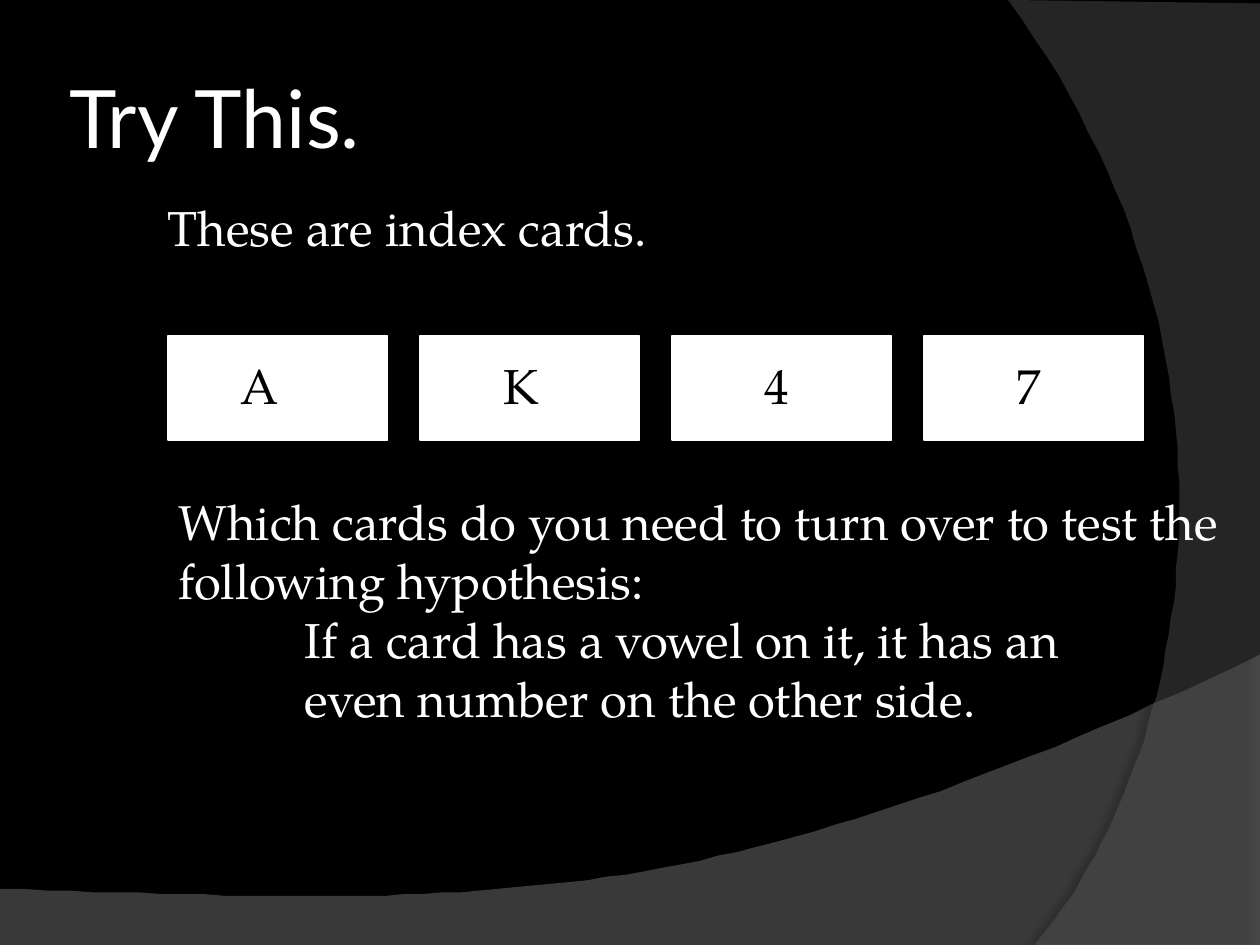
from lxml import etree
from pptx import Presentation
from pptx.dml.color import RGBColor
from pptx.enum.shapes import MSO_SHAPE
from pptx.enum.text import MSO_ANCHOR, MSO_AUTO_SIZE, PP_ALIGN
from pptx.oxml.ns import qn
from pptx.util import Pt

RECTANGLE = MSO_SHAPE.RECTANGLE
MIDDLE = MSO_ANCHOR.MIDDLE
LEFT = PP_ALIGN.LEFT
FIT_SHAPE, NO_FIT = MSO_AUTO_SIZE.SHAPE_TO_FIT_TEXT, MSO_AUTO_SIZE.NONE

THEME = {
    "background": "000000", "text": "FFFFFF", "card": "FFFFFF", "ink": "000000",
    "title_font": "Lato", "body_font": "TeX Gyre Pagella",
    "title_size": 46, "body_size": 28,
}

TITLE = "Try This."
INTRO = "These are index cards."
# Letter, label offset from the card's left edge, label width
CARDS = [("A", 34.5, 36), ("K", 40.5, 34.5), ("4", 46, 29), ("7", 46, 29)]
# Line, indent
QUESTION = [
    ("Which cards do you need to turn over to test the", 0),
    ("following hypothesis:", 0),
    ("If a card has a vowel on it, it has an", 72),
    ("even number on the other side.", 72),
]
CARD_LEFT, CARD_TOP, CARD_WIDTH, CARD_HEIGHT, CARD_STEP = 96, 192, 125.5, 59.5, 144

# Each sweep is a cubic curve closed through the corner points.
SWEEPS = [
    {"curve": [(720, 374.4), (402.5, 525), (281.5, 517.5), (0, 507.6)],
     "corners": [(0, 540.5), (720, 540.5)],
     "color": "7F7F7F", "opacity": 45,
     "shadow": {"opacity": 35, "blur": 4, "distance": 3.5, "angle": 270}},
    {"curve": [(591, 540), (673, 445.5), (733, 216), (576, 0)],
     "corners": [(720, 1.5), (720, 540)],
     "color": "5E5E5E", "opacity": 40,
     "shadow": {"opacity": 45, "blur": 4, "distance": 4, "angle": 180}},
]
CURVE_STEPS = 60


def curve_points(controls):
    """Sample a cubic Bezier curve."""
    points = []
    for step in range(CURVE_STEPS + 1):
        t = step / CURVE_STEPS
        weights = ((1 - t) ** 3, 3 * t * (1 - t) ** 2, 3 * t * t * (1 - t), t ** 3)
        points.append(tuple(sum(w * control[axis] for w, control in zip(weights, controls))
                            for axis in (0, 1)))
    return points


def set_opacity(color_element, percent):
    etree.SubElement(color_element, qn("a:alpha"), val=str(percent * 1000))


def add_shadow(shape, opacity, blur, distance, angle):
    effects = etree.SubElement(shape._element.spPr, qn("a:effectLst"))
    shadow = etree.SubElement(effects, qn("a:outerShdw"), blurRad=str(Pt(blur)),
                              dist=str(Pt(distance)), dir=str(angle * 60000),
                              algn="ctr", rotWithShape="0")
    set_opacity(etree.SubElement(shadow, qn("a:srgbClr"), val="000000"), opacity)


def fill_solid(target, color):
    target.fill.solid()
    target.fill.fore_color.rgb = RGBColor.from_string(color)


def add_sweep(page, sweep):
    points = curve_points(sweep["curve"]) + sweep["corners"]
    builder = page.shapes.build_freeform(*points[0], scale=Pt(1))
    builder.add_line_segments(points[1:], close=True)
    shape = builder.convert_to_shape()
    fill_solid(shape, sweep["color"])
    set_opacity(shape._element.spPr.find(".//" + qn("a:srgbClr")), sweep["opacity"])
    shape.line.fill.background()
    add_shadow(shape, **sweep["shadow"])


def style_font(para, kind, color):
    para.alignment = LEFT
    para.font.name = THEME[kind + "_font"]
    para.font.size = Pt(THEME[kind + "_size"])
    para.font.color.rgb = RGBColor.from_string(THEME[color])


def add_text(page, left, top, width, height, lines, color="text"):
    box = page.shapes.add_textbox(Pt(left), Pt(top), Pt(width), Pt(height))
    frame = box.text_frame
    frame.word_wrap = False
    frame.auto_size = FIT_SHAPE
    frame.text = "\n".join(line for line, _ in lines)
    for para, (_, indent) in zip(frame.paragraphs, lines):
        para._p.get_or_add_pPr().set("marL", str(Pt(indent)))
        style_font(para, "body", color)
    return box


def add_title(page):
    title = page.shapes.title
    title.left, title.top, title.width, title.height = Pt(36), Pt(21.5), Pt(527), Pt(90)
    frame = title.text_frame
    frame.text = TITLE
    frame.auto_size = NO_FIT
    frame.vertical_anchor = MIDDLE
    frame.margin_left = frame.margin_right = Pt(3.6)
    frame.margin_top = frame.margin_bottom = Pt(3.6)
    style_font(frame.paragraphs[0], "title", "text")
    page.shapes._spTree.append(title._element)  # in front of the sweeps


def add_card(page, left):
    card = page.shapes.add_shape(RECTANGLE, Pt(left), Pt(CARD_TOP),
                                 Pt(CARD_WIDTH), Pt(CARD_HEIGHT))
    card.shadow.inherit = False
    fill_solid(card, THEME["card"])
    fill_solid(card.line, THEME["card"])
    card.line.width = Pt(1)


def main():
    deck = Presentation()
    deck.slide_width, deck.slide_height = Pt(720), Pt(540)
    page = deck.slides.add_slide(deck.slide_layouts[5])
    fill_solid(page.background, THEME["background"])

    for sweep in SWEEPS:
        add_sweep(page, sweep)
    add_title(page)
    for index, (letter, offset, width) in enumerate(CARDS):
        left = CARD_LEFT + index * CARD_STEP
        add_card(page, left)
        label = add_text(page, left + offset, 199.5, width, 41, [(letter, 0)], "ink")
        fill_solid(label, THEME["card"])
    add_text(page, 88.8, 109.5, 288.5, 41, [(INTRO, 0)])
    add_text(page, 95, 277.5, 620, 142, QUESTION)
    deck.save("out.pptx")


if __name__ == "__main__":
    main()
